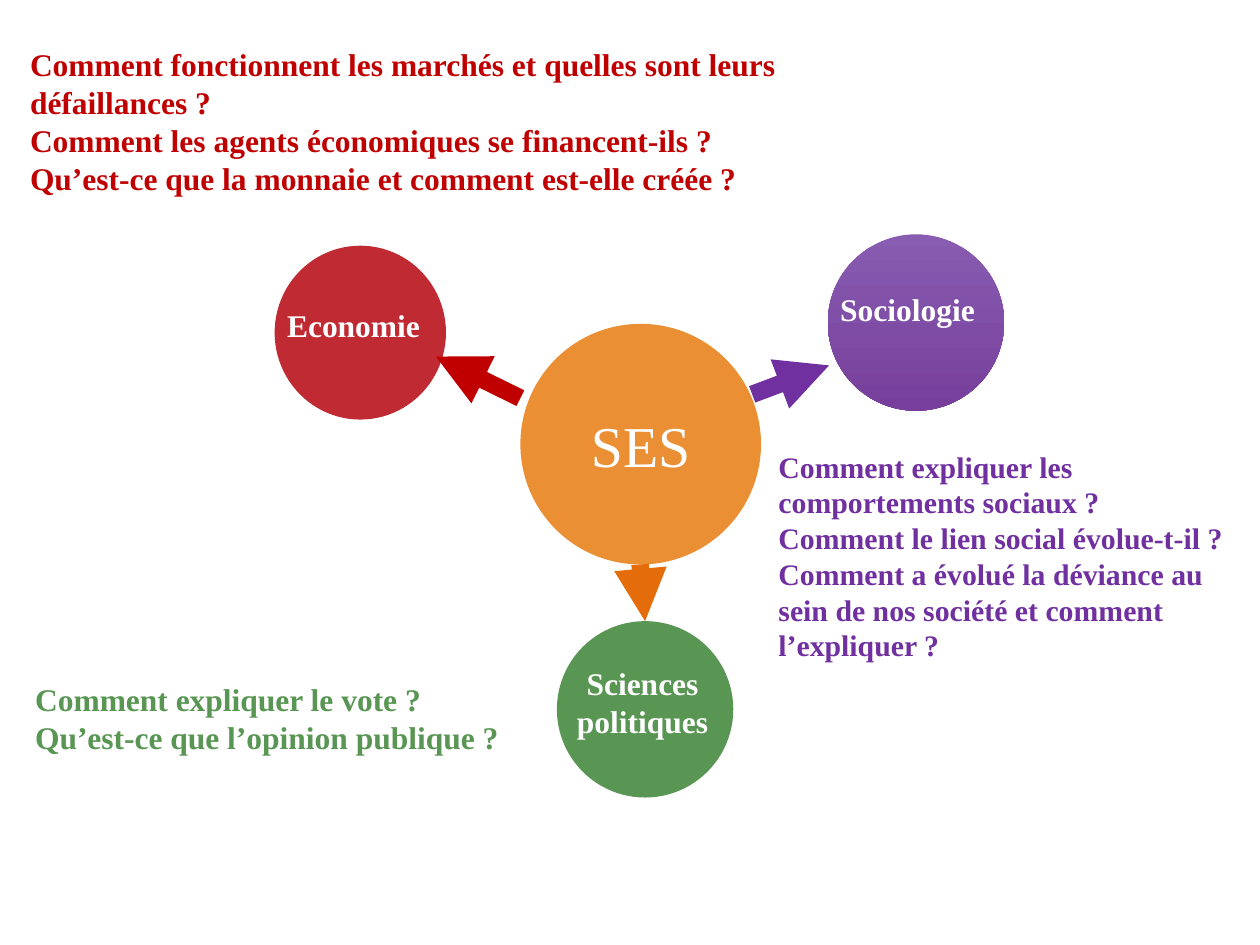
from lxml import etree
from pptx import Presentation
from pptx import util as u
from pptx.dml.color import RGBColor
from pptx.enum import shapes, text
from pptx.oxml.ns import qn

PX = 9144  # EMU per px, 100 px to the inch
HUES = {
    "white": "FFFFFF", "amber": "EA8F34", "brick": "C02A33", "red": "C00000",
    "lilac": "885CB1", "plum": "773F9B", "purple": "7030A0",
    "leaf": "599553", "green": "599653", "orange": "E46C0A",
}


def hue(name):
    return RGBColor.from_string(HUES[name])


class Board:
    font = "Times New Roman"

    def __init__(self, deck):
        self.slide = deck.slides.add_slide(deck.slide_layouts[6])
        self.items = self.slide.shapes

    def words(self, frame, lines, color, size, bold=True, align=None):
        frame.word_wrap = True
        for i, line in enumerate(lines):
            para = frame.paragraphs[0] if i == 0 else frame.add_paragraph()
            para.text = line
            para.alignment = align
            font = para.font
            font.name, font.size, font.bold = self.font, u.Pt(size), bold
            font.color.rgb = hue(color)

    def disc(self, box, *colors):
        disc = self.items.add_shape(shapes.MSO_SHAPE.OVAL, *(v * PX for v in box))
        disc.shadow.inherit = False
        disc.line.fill.background()
        if len(colors) == 1:
            disc.fill.solid()
            disc.fill.fore_color.rgb = hue(colors[0])
        else:
            disc.fill.gradient()
            disc.fill.gradient_angle = 270  # top to bottom
            for pos, (stop, color) in enumerate(zip(disc.fill.gradient_stops, colors)):
                stop.position = pos
                stop.color.rgb = hue(color)
        return disc

    def label(self, box, lines, color, size=18, align=None):
        frame = self.items.add_textbox(*(v * PX for v in box)).text_frame
        self.words(frame, lines, color, size, align=align)
        frame.auto_size = text.MSO_AUTO_SIZE.SHAPE_TO_FIT_TEXT

    def arrow(self, start, end, color):
        ends = (v * PX for v in start + end)
        arrow = self.items.add_connector(shapes.MSO_CONNECTOR.STRAIGHT, *ends)
        arrow.line.width = u.Pt(10)
        arrow.line.color.rgb = hue(color)
        props = arrow.element.spPr
        etree.SubElement(props.find(qn("a:ln")), qn("a:tailEnd"), type="triangle")
        etree.SubElement(props, qn("a:effectLst"))


def main():
    deck = Presentation()
    deck.slide_width, deck.slide_height = 1000 * PX, 750 * PX
    board = Board(deck)
    mid = text.PP_ALIGN.CENTER

    # Central subject
    hub = board.disc((413, 257, 191, 191), "amber")
    frame = hub.text_frame
    frame.margin_left = frame.margin_right = 0
    frame.margin_top = frame.margin_bottom = 0
    frame.vertical_anchor = text.MSO_ANCHOR.MIDDLE
    board.words(frame, ["SES"], "white", 33, bold=False, align=mid)

    # Three branches: disc, its colours, label place, name, alignment
    branches = [
        ((218, 195, 136, 138), ["brick"], (218, 238, 131, 40), "Economie", None),
        ((657, 186, 140, 140), ["lilac", "plum"], (657, 225, 142, 40), "Sociologie", None),
        ((442, 493, 140, 140), ["leaf"], (440, 522, 140, 71), "Sciences politiques", mid),
    ]
    for disc, colors, place, name, align in branches:
        board.disc(disc, *colors)
        board.label(place, [name], "white", align=align)

    # Arrows from the centre to the branches
    board.arrow((597, 313), (658, 290), "purple")
    board.arrow((413, 316), (346, 283), "red")
    board.arrow((508, 448), (512, 493), "orange")

    # Questions of each branch
    board.label((14, 31, 716, 131), [
        "Comment fonctionnent les marchés et quelles sont leurs défaillances ?",
        "Comment les agents économiques se financent-ils ?",
        "Qu’est-ce que la monnaie et comment est-elle créée ?",
    ], "red")
    board.label((608, 351, 380, 273), [
        "Comment expliquer les comportements sociaux ?",
        "Comment le lien social évolue-t-il ?",
        "Comment a évolué la déviance au sein de nos société et comment l’expliquer ?",
    ], "purple", 17)
    board.label((18, 535, 421, 71), [
        "Comment expliquer le vote ?",
        "Qu’est-ce que l’opinion publique ?",
    ], "green")

    deck.save("out.pptx")


if __name__ == "__main__":
    main()
